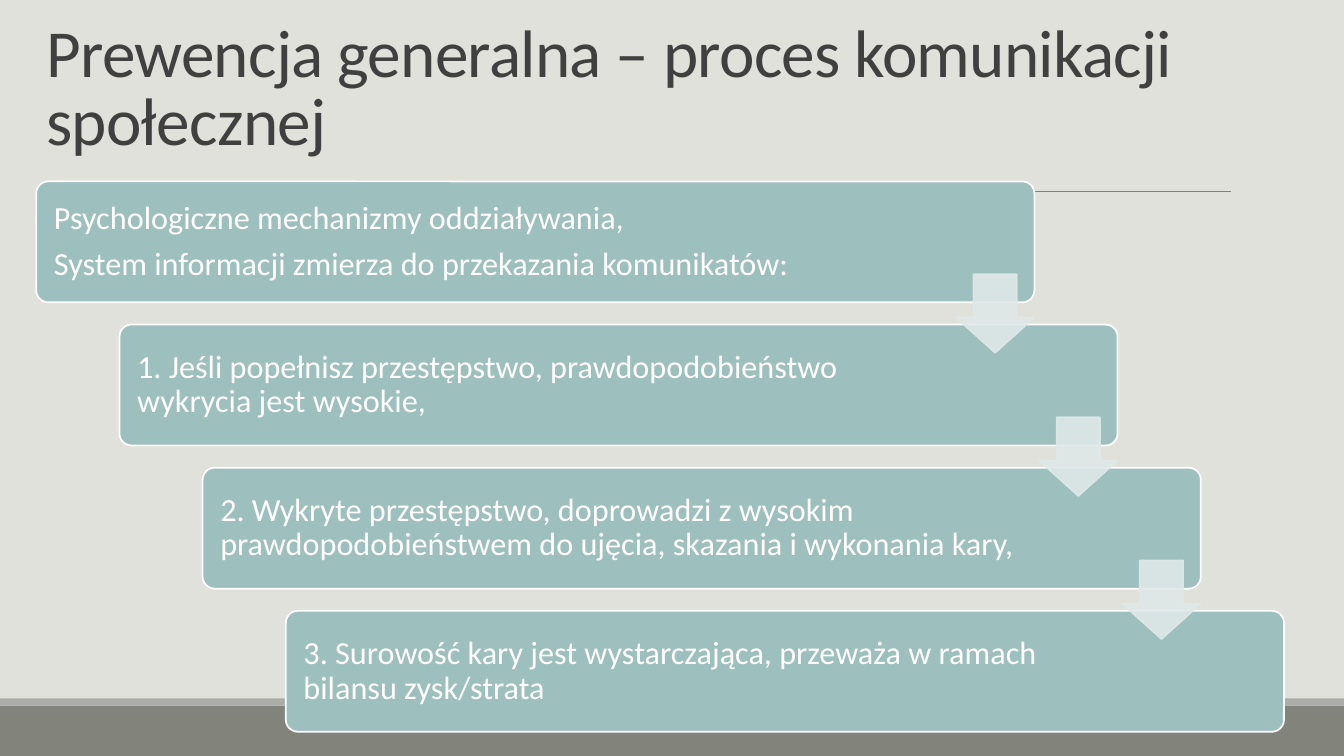
from lxml import etree
from pptx import Presentation
from pptx.dml.color import RGBColor
from pptx.enum.shapes import MSO_CONNECTOR, MSO_SHAPE
from pptx.enum.text import MSO_ANCHOR, PP_ALIGN
from pptx.oxml.ns import qn
from pptx.util import Inches, Pt

RECT, ROUNDED, DOWN = MSO_SHAPE.RECTANGLE, MSO_SHAPE.ROUNDED_RECTANGLE, MSO_SHAPE.DOWN_ARROW
STRAIGHT = MSO_CONNECTOR.STRAIGHT
LEFT, MIDDLE, BOTTOM = PP_ALIGN.LEFT, MSO_ANCHOR.MIDDLE, MSO_ANCHOR.BOTTOM

TITLE = "Prewencja generalna – proces komunikacji społecznej"
# Each step: its paragraphs and the share of the box width kept free on the right
STEPS = [
    (["Psychologiczne mechanizmy oddziaływania,",
      "System informacji zmierza do przekazania komunikatów:"], 0.145),
    (["1. Jeśli popełnisz przestępstwo, prawdopodobieństwo wykrycia jest wysokie,"], 0.175),
    (["2. Wykryte przestępstwo, doprowadzi z wysokim prawdopodobieństwem "
      "do ujęcia, skazania i wykonania kary,"], 0.175),
    (["3. Surowość kary jest wystarczająca, przeważa w ramach bilansu zysk/strata"], 0.175),
]

FONT = "Calibri"
BACKGROUND, FOOTER, FOOTER_EDGE, RULE = "E1E1DB", "82847C", "ACADA8", "808080"
TITLE_INK, BOX, WHITE, ARROW = "404040", "9DBFBE", "FFFFFF", "DFE8E8"

WIDTH, HEIGHT = 13.33, 7.5
FIRST_X, FIRST_Y = 0.36, 1.8
BOX_W, BOX_H = 9.9, 1.2
STEP_X, STEP_Y = 0.825, 1.42
ARROW_SIZE = 0.78
ARROW_DROP = 0.92


def color(hex_text):
    return RGBColor.from_string(hex_text)


def add_block(kind, x, y, w, h, fill, line=None):
    block = slide.shapes.add_shape(kind, Inches(x), Inches(y), Inches(w), Inches(h))
    block.shadow.inherit = False
    block.fill.solid()
    block.fill.fore_color.rgb = color(fill)
    if line:
        block.line.color.rgb = color(line)
        block.line.width = Pt(1.25)
    else:
        block.line.fill.background()
    return block


def write(frame, texts, size, ink, spacing, anchor):
    frame.word_wrap = True
    frame.vertical_anchor = anchor
    for i, text in enumerate(texts):
        paragraph = frame.paragraphs[0] if i == 0 else frame.add_paragraph()
        paragraph.text = text
        paragraph.alignment = LEFT
        paragraph.line_spacing = spacing
        if i:
            paragraph.space_before = Pt(8)
        paragraph.font.name = FONT
        paragraph.font.size = Pt(size)
        paragraph.font.color.rgb = color(ink)


prs = Presentation()
prs.slide_width, prs.slide_height = Inches(WIDTH), Inches(HEIGHT)
slide = prs.slides.add_slide(prs.slide_layouts[6])
slide.background.fill.solid()
slide.background.fill.fore_color.rgb = color(BACKGROUND)

add_block(RECT, 0, 7, WIDTH, 0.5, FOOTER)
add_block(RECT, 0, 6.93, WIDTH, 0.07, FOOTER_EDGE)
rule = slide.shapes.add_connector(STRAIGHT, Inches(1.31), Inches(1.9), Inches(12.21), Inches(1.9))
rule.line.color.rgb = color(RULE)
rule.line.width = Pt(0.5)
etree.SubElement(rule._element.spPr, qn("a:effectLst"))

heading = slide.shapes.add_textbox(Inches(FIRST_X), Inches(0.1), Inches(12.06), Inches(1.53))
write(heading.text_frame, [TITLE], 48, TITLE_INK, 0.85, BOTTOM)
heading.text_frame.paragraphs[0].runs[0]._r.get_or_add_rPr().set("spc", "-50")

for i, (texts, free_share) in enumerate(STEPS):
    box = add_block(ROUNDED, FIRST_X + i * STEP_X, FIRST_Y + i * STEP_Y, BOX_W, BOX_H, BOX, WHITE)
    box.adjustments[0] = 0.1
    box.text_frame.margin_left = Inches(0.14)
    box.text_frame.margin_right = Inches(BOX_W * free_share)
    write(box.text_frame, texts, 23, WHITE, 0.9, MIDDLE)

for i in range(len(STEPS) - 1):
    arrow = add_block(DOWN, FIRST_X + i * STEP_X + BOX_W - ARROW_SIZE, FIRST_Y + i * STEP_Y + ARROW_DROP,
                      ARROW_SIZE, ARROW_SIZE, ARROW, ARROW)
    arrow.adjustments[0], arrow.adjustments[1] = 0.55, 0.45
    for tint in arrow._element.spPr.iter(qn("a:srgbClr")):
        etree.SubElement(tint, qn("a:alpha")).set("val", "90000")

prs.save("out.pptx")
